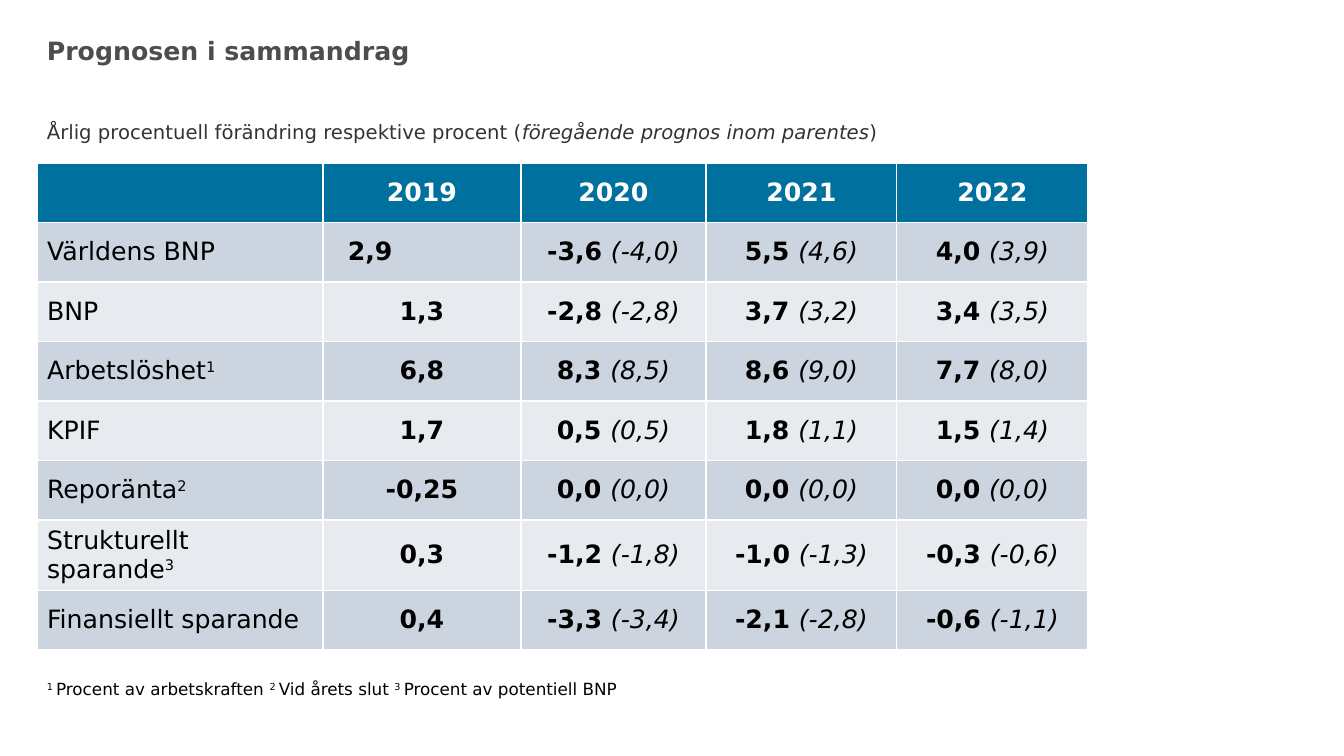
from pptx import Presentation
from pptx.dml.color import RGBColor
from pptx.enum.text import MSO_ANCHOR, PP_ALIGN
from pptx.util import Emu, Pt

FONT = "DejaVu Sans"
TITLE_GREY = RGBColor(0x4D, 0x4D, 0x4D)
TEXT_GREY = RGBColor(0x33, 0x33, 0x33)
BLACK = RGBColor(0, 0, 0)
WHITE = RGBColor(0xFF, 0xFF, 0xFF)
HEADER_BLUE = RGBColor(0x00, 0x70, 0x9E)
BANDS = (RGBColor(0xCC, 0xD5, 0xDF), RGBColor(0xE7, 0xEB, 0xF0))

EMU_PER_PX = 12192000 / 1344
COLUMN_WIDTHS = (286, 198, 185, 191, 191)
YEARS = ("", "2019", "2020", "2021", "2022")
FORECASTS = (
    ("Världens BNP", "", "2,9", "-3,6 (-4,0)", "5,5 (4,6)", "4,0 (3,9)"),
    ("BNP", "", "1,3", "-2,8 (-2,8)", "3,7 (3,2)", "3,4 (3,5)"),
    ("Arbetslöshet", "1", "6,8", "8,3 (8,5)", "8,6 (9,0)", "7,7 (8,0)"),
    ("KPIF", "", "1,7", "0,5 (0,5)", "1,8 (1,1)", "1,5 (1,4)"),
    ("Reporänta", "2", "-0,25", "0,0 (0,0)", "0,0 (0,0)", "0,0 (0,0)"),
    ("Strukturellt sparande", "3", "0,3", "-1,2 (-1,8)", "-1,0 (-1,3)", "-0,3 (-0,6)"),
    ("Finansiellt sparande", "", "0,4", "-3,3 (-3,4)", "-2,1 (-2,8)", "-0,6 (-1,1)"),
)


def px(length):
    """Turn a length in px into EMU."""
    return Emu(round(length * EMU_PER_PX))


def write_spans(para, spans, size, color):
    """Fill a paragraph with (text, style) spans in one font, size and colour."""
    para.font.name = FONT
    para.font.size = Pt(size)
    para.font.color.rgb = color
    for text, style in spans:
        span = para.add_run()
        span.text = text
        if style == "bold":
            span.font.bold = True
        elif style == "italic":
            span.font.italic = True
        elif style == "raised":
            span._r.get_or_add_rPr().set("baseline", "30000")


def add_text(page, box, spans, size, color, anchor=MSO_ANCHOR.TOP):
    """Place one paragraph of text in the given box."""
    frame = page.shapes.add_textbox(*map(px, box)).text_frame
    frame.word_wrap = True
    frame.vertical_anchor = anchor
    write_spans(frame.paragraphs[0], spans, size, color)


def fill_cell(cell, spans, fill, color, align):
    """Colour a table cell and write its spans."""
    cell.fill.solid()
    cell.fill.fore_color.rgb = fill
    cell.vertical_anchor = MSO_ANCHOR.MIDDLE
    para = cell.text_frame.paragraphs[0]
    para.alignment = align
    write_spans(para, [span for span in spans if span[0]], 18, color)


def value_spans(value):
    """Split a value into the bold forecast and the italic previous one."""
    current, gap, previous = value.partition(" ")
    return [(current + gap, "bold"), (previous, "italic")]


def add_forecast_table(page, box):
    """Draw the forecast table with equal rows in the given box."""
    row_count = len(FORECASTS) + 1
    table = page.shapes.add_table(row_count, len(YEARS), *map(px, box)).table
    table.horz_banding = False
    for column, width in zip(table.columns, COLUMN_WIDTHS):
        column.width = px(width)
    for row in table.rows:
        row.height = px(box[3] / row_count)
    for column, year in enumerate(YEARS):
        fill_cell(table.cell(0, column), [(year, "bold")], HEADER_BLUE, WHITE, PP_ALIGN.CENTER)
    for index, (label, note, *values) in enumerate(FORECASTS):
        band = BANDS[index % 2]
        label_spans = [(label, "plain"), (note, "raised")]
        fill_cell(table.cell(index + 1, 0), label_spans, band, BLACK, PP_ALIGN.LEFT)
        for column, value in enumerate(values, 1):
            fill_cell(table.cell(index + 1, column), value_spans(value), band, BLACK, PP_ALIGN.CENTER)
    world_2019 = table.cell(1, 1)
    world_2019.text_frame.paragraphs[0].alignment = PP_ALIGN.LEFT
    world_2019.margin_left = px(25)


def add_forecast_page(page):
    """Lay out the title, subtitle, table and footnotes."""
    add_text(page, (37, 30, 955, 55), [("Prognosen i sammandrag", "bold")], 18, TITLE_GREY)
    subtitle = [
        ("Årlig procentuell förändring respektive procent (", "plain"),
        ("föregående prognos inom parentes", "italic"),
        (")", "plain"),
    ]
    add_text(page, (37, 93, 955, 55), subtitle, 14, TEXT_GREY, MSO_ANCHOR.BOTTOM)
    add_forecast_table(page, (37, 163, sum(COLUMN_WIDTHS), 476))
    footnotes = [
        ("1 ", "raised"), ("Procent av arbetskraften ", "plain"),
        ("2 ", "raised"), ("Vid årets slut ", "plain"),
        ("3 ", "raised"), ("Procent av potentiell BNP", "plain"),
    ]
    add_text(page, (37, 674, 955, 69), footnotes, 12, BLACK)


def main():
    """Build the deck and save it."""
    deck = Presentation()
    deck.slide_width = px(1344)
    deck.slide_height = px(756)
    add_forecast_page(deck.slides.add_slide(deck.slide_layouts[6]))
    deck.save("out.pptx")


if __name__ == "__main__":
    main()
